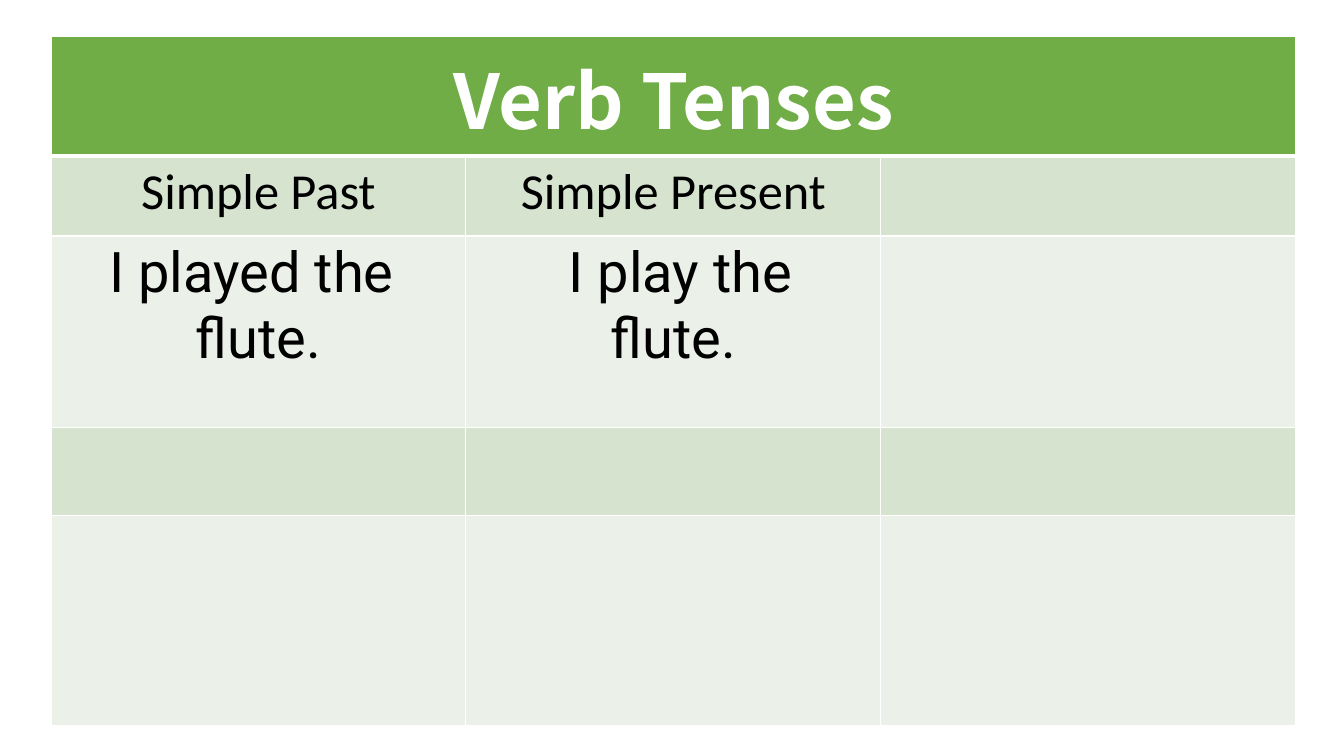
"""Build a slide with a table of verb tenses."""
import dataclasses

import pptx
import pptx.dml.color
import pptx.enum.text
import pptx.oxml
import pptx.oxml.ns
import pptx.util

Pt = pptx.util.Pt
Rgb = pptx.dml.color.RGBColor.from_string


@dataclasses.dataclass(frozen=True)
class Theme:
    """Colours as RRGGBB and text styles as font, size, colour, bold."""
    head: str = "70AD47"
    bands: tuple = ("D5E3CF", "EBF1E9")
    line: str = "FFFFFF"
    thin: int = 1
    thick: int = 3
    title: tuple = ("Noto Sans CJK JP", 54, "FFFFFF", True)
    tense: tuple = ("Calibri", 36, "000000", False)
    sample: tuple = ("Roboto", 40, "000000", False)


THEME = Theme()
COLS = [296.4] * 3
ROWS = [81.4, 56.9, 136.8, 62.6, 150.5]
TEXTS = [
    (0, 0, THEME.title, ["Verb Tenses"]),
    (1, 0, THEME.tense, ["Simple Past"]),
    (1, 1, THEME.tense, ["Simple Present"]),
    (2, 0, THEME.sample, ["I played the ", "flute."]),
    (2, 1, THEME.sample, [" I play the", "flute."]),
]


def edge(cell, side, width):
    """Draw one border of a cell."""
    space = pptx.oxml.ns.nsdecls("a")
    line = pptx.oxml.parse_xml(
        f'<a:ln{side} {space} w="{Pt(width)}"><a:solidFill>'
        f'<a:srgbClr val="{THEME.line}"/></a:solidFill></a:ln{side}>')
    cell._tc.get_or_add_tcPr().append(line)


def paint(cell, row):
    """Give a cell its borders and the fill of its row."""
    for side in "LRTB":
        under = (row, side) in ((0, "B"), (1, "T"))
        edge(cell, side, THEME.thick if under else THEME.thin)
    cell.fill.solid()
    tone = THEME.bands[(row - 1) % 2] if row else THEME.head
    cell.fill.fore_color.rgb = Rgb(tone)


def write(cell, style, lines):
    """Write centred paragraphs into a cell."""
    name, size, tone, bold = style
    frame = cell.text_frame
    for i, line in enumerate(lines):
        para = frame.add_paragraph() if i else frame.paragraphs[0]
        para.alignment = pptx.enum.text.PP_ALIGN.CENTER
        run = para.add_run()
        run.text = line
        run.font.name = name
        run.font.size = Pt(size)
        run.font.bold = bold
        run.font.color.rgb = Rgb(tone)


def grid(slide, left, top):
    """Add the table with its sizes, fills and borders."""
    table = slide.shapes.add_table(
        len(ROWS), len(COLS), Pt(left), Pt(top),
        Pt(sum(COLS)), Pt(sum(ROWS))).table
    for col, width in zip(table.columns, COLS):
        col.width = Pt(width)
    for i, height in enumerate(ROWS):
        table.rows[i].height = Pt(height)
        for cell in table.rows[i].cells:
            paint(cell, i)
    table.cell(0, 0).merge(table.cell(0, len(COLS) - 1))
    return table


def main():
    """Build and save the slide."""
    deck = pptx.Presentation()
    deck.slide_width, deck.slide_height = Pt(960), Pt(540)
    slide = deck.slides.add_slide(deck.slide_layouts[6])
    table = grid(slide, 36.4, 26.2)
    for row, col, style, lines in TEXTS:
        write(table.cell(row, col), style, lines)
    deck.save("out.pptx")


if __name__ == "__main__":
    main()
